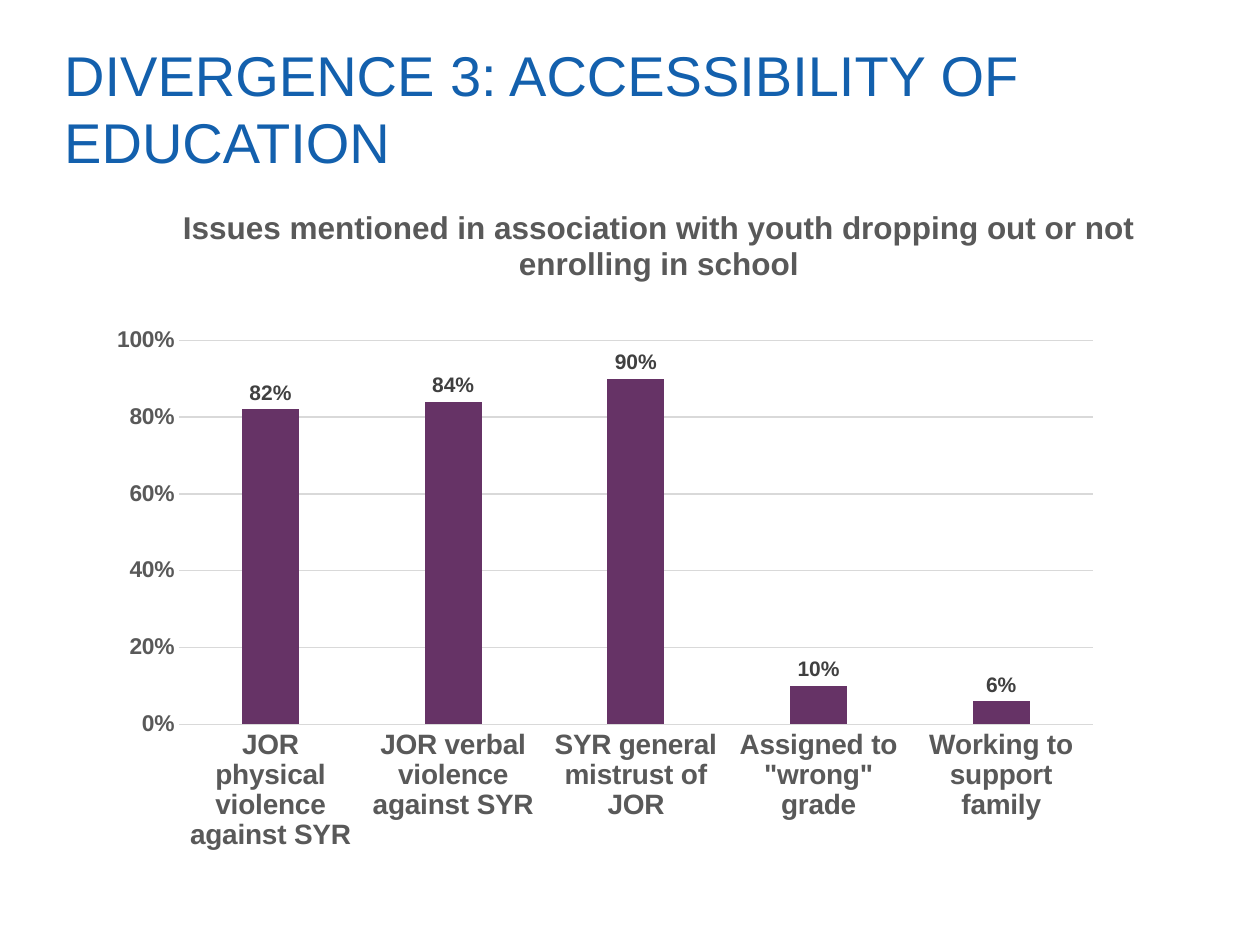
from lxml import etree
from pptx import Presentation
from pptx.chart.data import CategoryChartData
from pptx.dml.color import RGBColor
from pptx.enum.chart import XL_CHART_TYPE, XL_LABEL_POSITION, XL_TICK_MARK
from pptx.enum.text import MSO_ANCHOR, PP_ALIGN
from pptx.oxml.ns import qn
from pptx.util import Inches, Pt

BLUE = RGBColor(0x13, 0x60, 0xAD)
PURPLE = RGBColor(0x66, 0x33, 0x66)
GREY = RGBColor(0x59, 0x59, 0x59)
DARK_GREY = RGBColor(0x40, 0x40, 0x40)
LIGHT_GREY = RGBColor(0xD9, 0xD9, 0xD9)
BLACK = RGBColor(0, 0, 0)

ISSUES = {
    "JOR physical violence against SYR": 0.82,
    "JOR verbal violence against SYR": 0.84,
    "SYR general mistrust of JOR": 0.9,
    'Assigned to "wrong" grade': 0.1,
    "Working to support family": 0.06,
}


def set_font(font, size, color, bold=False):
    font.name = "Arial"
    font.size = Pt(size)
    font.bold = bold
    font.color.rgb = color


def set_text(tf, text, size, color, bold=False, align=PP_ALIGN.LEFT, spacing=None):
    p = tf.paragraphs[0]
    p.alignment = align
    p.line_spacing = spacing
    r = p.add_run()
    r.text = text
    set_font(r.font, size, color, bold)


def set_line(line, color):
    line.color.rgb = color
    line.width = Pt(0.75)


def set_plot_layout(chart, x, y, w, h):
    """Fix the inner plot area, in fractions of the chart."""
    plot_area = chart._chartSpace.chart.plotArea
    for old in plot_area.findall(qn("c:layout")):
        plot_area.remove(old)
    layout = etree.Element(qn("c:layout"))
    manual = etree.SubElement(layout, qn("c:manualLayout"))
    settings = {"layoutTarget": "inner", "xMode": "edge", "yMode": "edge",
                "x": x, "y": y, "w": w, "h": h}
    for tag, val in settings.items():
        etree.SubElement(manual, qn(f"c:{tag}")).set("val", str(val))
    plot_area.insert(0, layout)


def style_axis(axis, size):
    axis.major_tick_mark = XL_TICK_MARK.NONE
    axis.minor_tick_mark = XL_TICK_MARK.NONE
    set_font(axis.tick_labels.font, size, GREY, bold=True)


def add_title(slide, text):
    sp = slide.shapes.title
    sp.left, sp.top, sp.width, sp.height = (
        Inches(0.41), Inches(0.26), Inches(7.97), Inches(1.18))
    tf = sp.text_frame
    tf.word_wrap = True
    tf.vertical_anchor = MSO_ANCHOR.BOTTOM
    set_text(tf, text, 32, BLUE)


def add_issue_chart(slide, title):
    data = CategoryChartData(number_format="0%")
    data.categories = list(ISSUES)
    data.add_series("Series 1", list(ISSUES.values()))
    chart = slide.shapes.add_chart(
        XL_CHART_TYPE.COLUMN_CLUSTERED, Inches(0.41), Inches(1.43),
        Inches(9.64), Inches(5.83), data).chart
    set_font(chart.font, 10, BLACK)
    chart.has_legend = False
    chart.has_title = True
    chart.chart_title.include_in_layout = False
    set_text(chart.chart_title.text_frame, title, 18, GREY, bold=True,
             align=PP_ALIGN.CENTER)
    set_plot_layout(chart, 0.105, 0.218, 0.752, 0.523)

    # Axes
    style_axis(chart.category_axis, 16)
    set_line(chart.category_axis.format.line, LIGHT_GREY)
    axis = chart.value_axis
    style_axis(axis, 13)
    axis.format.line.fill.background()
    axis.minimum_scale, axis.maximum_scale, axis.major_unit = 0, 1, 0.2
    axis.tick_labels.number_format = "0%"
    axis.tick_labels.number_format_is_linked = False
    set_line(axis.major_gridlines.format.line, LIGHT_GREY)

    # Columns and their labels
    plot = chart.plots[0]
    plot.gap_width, plot.overlap = 219, -27
    plot.vary_by_categories = False
    series = plot.series[0]
    series.format.fill.solid()
    series.format.fill.fore_color.rgb = PURPLE
    labels = series.data_labels
    labels.show_value = True
    labels.position = XL_LABEL_POSITION.OUTSIDE_END
    labels.number_format = "0%"
    labels.number_format_is_linked = False
    set_font(labels.font, 12, DARK_GREY, bold=True)


def main():
    prs = Presentation()
    prs.slide_width, prs.slide_height = Inches(10), Inches(7.5)
    slide = prs.slides.add_slide(prs.slide_layouts[5])
    add_title(slide, "DIVERGENCE 3: ACCESSIBILITY OF EDUCATION")
    add_issue_chart(slide, "Issues mentioned in association with youth "
                           "dropping out or not enrolling in school")
    prs.save("out.pptx")


if __name__ == "__main__":
    main()
